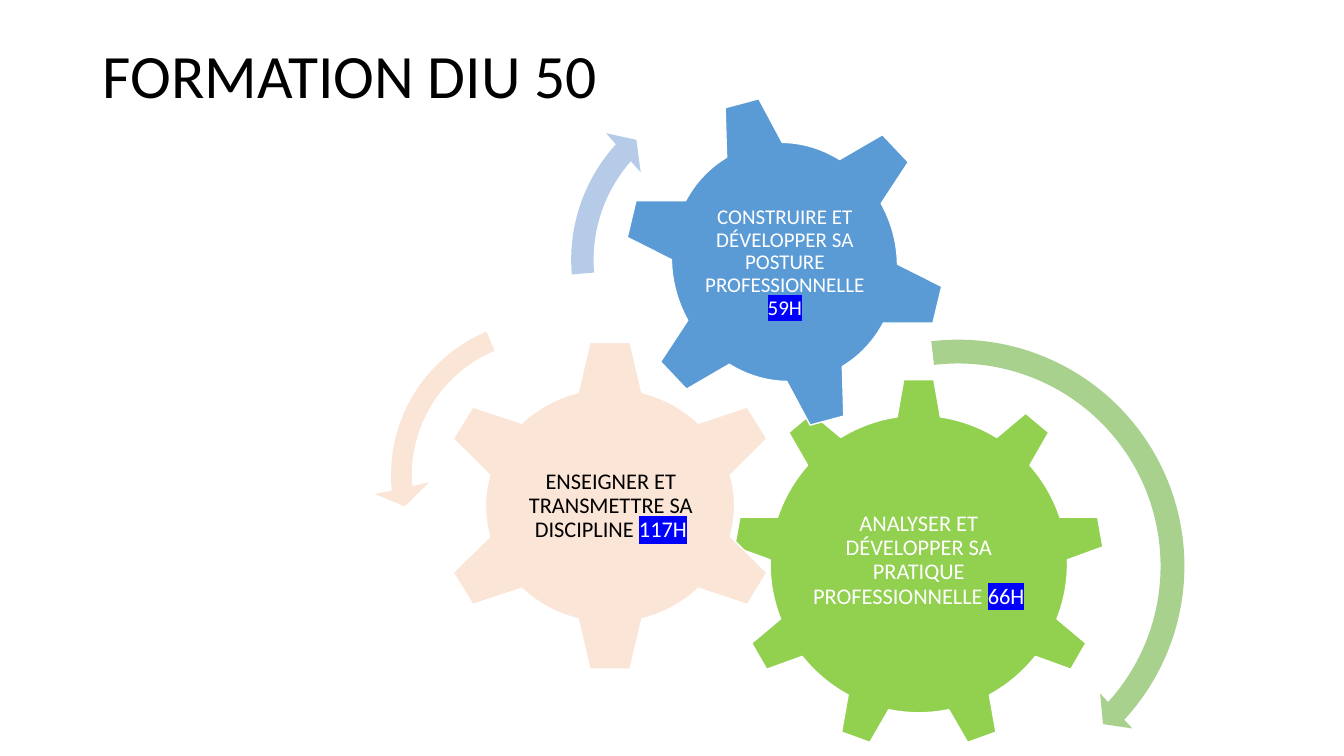
from dataclasses import dataclass

from lxml import etree
from pptx import Presentation
from pptx.dml.color import RGBColor
from pptx.enum.shapes import MSO_SHAPE
from pptx.enum.text import MSO_ANCHOR, MSO_AUTO_SIZE, PP_ALIGN
from pptx.oxml.ns import qn
from pptx.util import Cm, Pt

GEAR_6, GEAR_9 = MSO_SHAPE.GEAR_6, MSO_SHAPE.GEAR_9
ARROW, LEFT_ARROW = MSO_SHAPE.CIRCULAR_ARROW, MSO_SHAPE.LEFT_CIRCULAR_ARROW
LEFT, CENTER = PP_ALIGN.LEFT, PP_ALIGN.CENTER
MIDDLE = MSO_ANCHOR.MIDDLE
NO_AUTOFIT = MSO_AUTO_SIZE.NONE


@dataclass(frozen=True)
class Theme:
    font: str = "Calibri"
    title_size: int = 44
    label_size: int = 16
    small_size: int = 15
    black: str = "000000"
    white: str = "FFFFFF"
    highlight: str = "0000FF"
    green: str = "92D050"
    light_green: str = "A9D18E"
    peach: str = "FBE5D6"
    blue: str = "5B9BD5"
    light_blue: str = "B5CBE7"


def add_text(p, text, *, font, size, color, highlight=None):
    """Append a formatted run to a paragraph."""
    r = p.add_run()
    r.text = text
    r.font.size = Pt(size)
    r.font.color.rgb = RGBColor.from_string(color)
    r.font.name = font
    if highlight:
        mark = etree.Element(qn("a:highlight"))
        etree.SubElement(mark, qn("a:srgbClr"), val=highlight)
        r.font.fill  # the highlight must directly follow the text fill
        r._r.rPr.find(qn("a:solidFill")).addnext(mark)


class SlideBuilder:
    def __init__(self, slide, theme):
        self.slide = slide
        self.theme = theme

    def _paragraph(self, tf, align):
        tf.word_wrap = True
        tf.auto_size = NO_AUTOFIT
        tf.vertical_anchor = MIDDLE
        p = tf.paragraphs[0]
        p.alignment = align
        p.line_spacing = 0.9
        return p

    def _shape(self, kind, box, fill):
        sp = self.slide.shapes.add_shape(kind, *map(Cm, box))
        sp.shadow.inherit = False
        sp.fill.solid()
        sp.fill.fore_color.rgb = RGBColor.from_string(fill)
        return sp

    def title(self, text, box):
        t, sp = self.theme, self.slide.shapes.title
        sp.left, sp.top, sp.width, sp.height = map(Cm, box)
        p = self._paragraph(sp.text_frame, LEFT)
        add_text(p, text, font=t.font, size=t.title_size, color=t.black)

    def gear(self, kind, box, fill, rotation=0):
        sp = self._shape(kind, box, fill)
        sp.rotation = rotation
        sp.line.color.rgb = RGBColor.from_string(self.theme.white)
        sp.line.width = Pt(1)

    def label(self, text, hours, box, size, color):
        t = self.theme
        tf = self.slide.shapes.add_textbox(*map(Cm, box)).text_frame
        tf.margin_left = tf.margin_right = Cm(0.05)
        tf.margin_top = tf.margin_bottom = Cm(0.05)
        p = self._paragraph(tf, CENTER)
        add_text(p, text + " ", font=t.font, size=size, color=color)
        add_text(p, hours, font=t.font, size=size, color=t.white,
                 highlight=t.highlight)

    def arrow(self, kind, left, top, size, fill, adjustments):
        sp = self._shape(kind, (left, top, size, size), fill)
        sp.line.fill.background()
        for i, value in enumerate(adjustments):
            sp.adjustments[i] = value


def main():
    prs = Presentation()
    prs.slide_width, prs.slide_height = Cm(33.87), Cm(19.05)
    theme = Theme()
    s = SlideBuilder(prs.slides.add_slide(prs.slide_layouts[5]), theme)

    s.title("FORMATION DIU 50", (2.33, 0.15, 29.21, 3.68))

    # Gears with their labels
    s.gear(GEAR_9, (18.47, 9.53, 9.37, 9.37), theme.green)
    s.label("ANALYSER ET DÉVELOPPER SA PRATIQUE PROFESSIONNELLE", "66H",
            (20.35, 11.71, 5.61, 4.83), theme.label_size, theme.white)

    s.gear(GEAR_6, (10.97, 8.53, 8.81, 8.43), theme.peach)
    s.label("ENSEIGNER ET TRANSMETTRE SA DISCIPLINE", "117H",
            (13.16, 10.67, 4.47, 4.17), theme.label_size, theme.black)

    s.gear(GEAR_6, (15.72, 2.36, 8.1, 8.48), theme.blue, rotation=345)
    s.label("CONSTRUIRE ET DÉVELOPPER SA POSTURE PROFESSIONNELLE", "59H",
            (17.48, 4.27, 4.6, 4.72), theme.small_size, theme.white)

    # Rotation arrows
    s.arrow(ARROW, 18.14, 8.26, 12.01, theme.light_green,
            (0.05, 2.99, 25.49, 157.92, 0.05))
    s.arrow(LEFT_ARROW, 9.42, 7.62, 8.71, theme.peach,
            (0.06, 4.3, 104.89, 148.38, 0.08))
    s.arrow(ARROW, 14.02, 1.85, 9.4, theme.light_blue,
            (0.06, 3.94, 133.14, 105.08, 0.07))

    prs.save("out.pptx")


if __name__ == "__main__":
    main()
